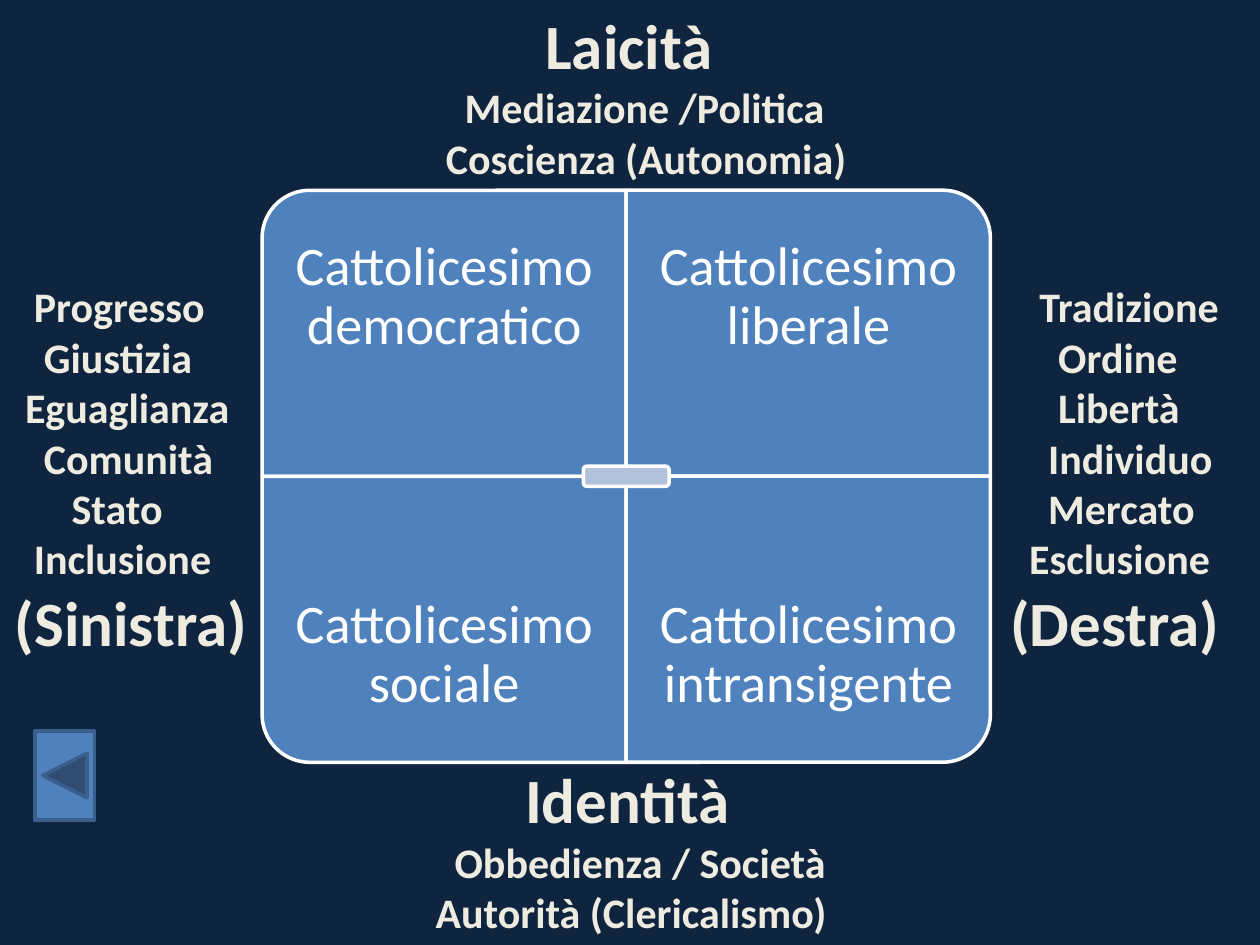
from dataclasses import dataclass

from pptx import Presentation
from pptx.dml.color import RGBColor
from pptx.enum.shapes import MSO_SHAPE
from pptx.enum.text import MSO_ANCHOR, MSO_AUTO_SIZE, PP_ALIGN
from pptx.util import Inches, Pt

ROUND_CORNER = MSO_SHAPE.ROUND_1_RECTANGLE
ROUNDED = MSO_SHAPE.ROUNDED_RECTANGLE
BACK_BUTTON = MSO_SHAPE.ACTION_BUTTON_BACK_OR_PREVIOUS


@dataclass(frozen=True)
class Theme:
    font: str = "Calibri"
    background: str = "0F243E"
    blue: str = "4F81BD"
    dark_blue: str = "3A5F8C"
    pale_blue: str = "B3C1DB"
    white: str = "FFFFFF"
    cream: str = "EEECE1"
    heading_size: int = 36
    quadrant_size: int = 31
    item_size: int = 24
    line_width: int = 2


THEME = Theme()

MATRIX_LEFT, MATRIX_TOP = 2.08, 1.51
CELL_WIDTH, CELL_HEIGHT = 2.89, 2.27
CELL_TEXT_HEIGHT = 1.7
CELL_INSET = 0.24
HUB_WIDTH, HUB_HEIGHT = 0.68, 0.16

# text, column, row, rotation that turns the round corner outwards
QUADRANTS = [
    ("Cattolicesimo democratico", 0, 0, 270),
    ("Cattolicesimo liberale", 1, 0, 0),
    ("Cattolicesimo sociale", 0, 1, 180),
    ("Cattolicesimo intransigente", 1, 1, 90),
]

# box (left, top, width, height), heading, lines as (text, indent in inches)
AXIS_LABELS = [
    ((3.44, 0, 3.44, 1.51), "Laicità",
     [("Laicità", 0.79), ("Mediazione /Politica", 0.15),
      ("Coscienza (Autonomia)", 0)]),
    ((0.02, 2.18, 2.11, 3.13), "(Sinistra)",
     [("Progresso", 0.15), ("Giustizia", 0.23), ("Eguaglianza", 0.08),
      ("Comunità", 0.23), ("Stato", 0.45), ("Inclusione", 0.15),
      ("(Sinistra)", 0)]),
    ((7.92, 2.18, 2.08, 3.13), "(Destra)",
     [("Tradizione", 0.23), ("Ordine", 0.38), ("Libertà", 0.38),
      ("Individuo", 0.3), ("Mercato", 0.3), ("Esclusione", 0.15),
      ("(Destra)", 0)]),
    ((3.28, 5.99, 4.06, 1.51), "Identità",
     [("Identità", 0.79), ("Obbedienza / Società", 0.23),
      ("Autorità (Clericalismo)", 0.08)]),
]


def color(value):
    return RGBColor.from_string(value)


def add_block(shapes, kind, box, fill, line):
    shape = shapes.add_shape(kind, *map(Inches, box))
    shape.shadow.inherit = False
    shape.fill.solid()
    shape.fill.fore_color.rgb = color(fill)
    shape.line.color.rgb = color(line)
    shape.line.width = Pt(THEME.line_width)
    return shape


def add_text_frame(shapes, box):
    text_frame = shapes.add_textbox(*map(Inches, box)).text_frame
    text_frame.word_wrap = True
    return text_frame


def format_runs(paragraph, size, text_color, bold=False):
    for run in paragraph.runs:
        run.font.name = THEME.font
        run.font.size = Pt(size)
        run.font.bold = bold
        run.font.color.rgb = color(text_color)


def add_quadrant(shapes, text, column, row, rotation):
    left = MATRIX_LEFT + column * CELL_WIDTH
    top = MATRIX_TOP + row * CELL_HEIGHT
    # A quarter turn swaps the sides, so the unrotated box is upright.
    width, height = CELL_WIDTH, CELL_HEIGHT
    if rotation % 180:
        width, height = height, width
    box = (left + (CELL_WIDTH - width) / 2, top + (CELL_HEIGHT - height) / 2,
           width, height)
    cell = add_block(shapes, ROUND_CORNER, box, THEME.blue, THEME.white)
    cell.rotation = rotation

    text_top = top + row * (CELL_HEIGHT - CELL_TEXT_HEIGHT)
    text_frame = add_text_frame(
        shapes, (left, text_top, CELL_WIDTH, CELL_TEXT_HEIGHT))
    text_frame.vertical_anchor = MSO_ANCHOR.MIDDLE
    text_frame.margin_left = text_frame.margin_right = Inches(CELL_INSET)
    text_frame.margin_top = text_frame.margin_bottom = Inches(CELL_INSET)
    text_frame.text = text
    paragraph = text_frame.paragraphs[0]
    paragraph.alignment = PP_ALIGN.CENTER
    paragraph.line_spacing = 0.9
    format_runs(paragraph, THEME.quadrant_size, THEME.white)


def add_matrix(slide):
    shapes = slide.shapes.add_group_shape().shapes
    for quadrant in QUADRANTS:
        add_quadrant(shapes, *quadrant)
    hub_box = (MATRIX_LEFT + CELL_WIDTH - HUB_WIDTH / 2,
               MATRIX_TOP + CELL_HEIGHT - HUB_HEIGHT / 2,
               HUB_WIDTH, HUB_HEIGHT)
    add_block(shapes, ROUNDED, hub_box, THEME.pale_blue, THEME.white)


def add_axis_label(slide, box, heading, lines):
    text_frame = add_text_frame(slide.shapes, box)
    text_frame.auto_size = MSO_AUTO_SIZE.SHAPE_TO_FIT_TEXT
    text_frame.text = "\n".join(text for text, _ in lines)
    for paragraph, (text, indent) in zip(text_frame.paragraphs, lines):
        properties = paragraph._p.get_or_add_pPr()
        properties.set("marL", str(Inches(indent)))
        properties.set("indent", "0")
        size = THEME.heading_size if text == heading else THEME.item_size
        format_runs(paragraph, size, THEME.cream, bold=True)


def main():
    presentation = Presentation()
    presentation.slide_width = Inches(10)
    presentation.slide_height = Inches(7.5)
    slide = presentation.slides.add_slide(presentation.slide_layouts[6])
    slide.background.fill.solid()
    slide.background.fill.fore_color.rgb = color(THEME.background)

    add_matrix(slide)
    for label in AXIS_LABELS:
        add_axis_label(slide, *label)
    add_block(slide.shapes, BACK_BUTTON, (0.28, 5.8, 0.47, 0.71),
              THEME.blue, THEME.dark_blue)
    presentation.save("out.pptx")


if __name__ == "__main__":
    main()
